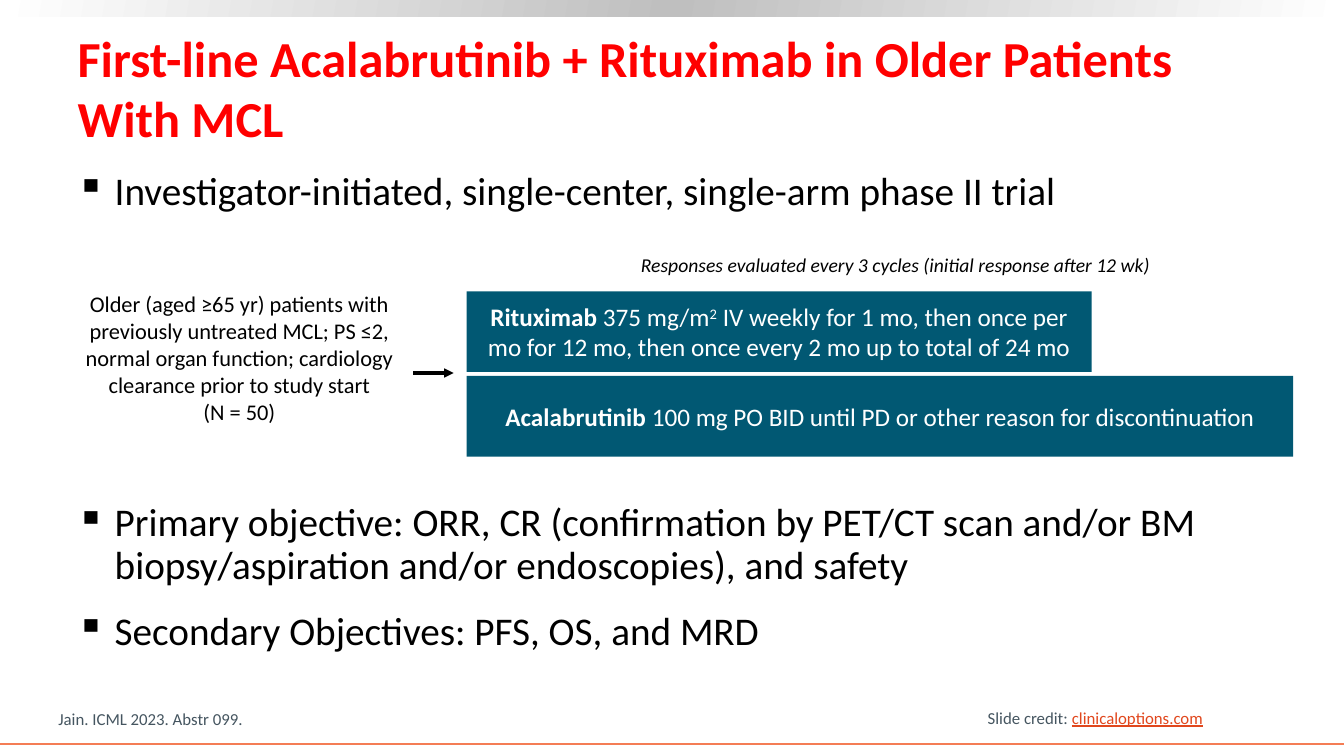
from copy import deepcopy
from dataclasses import dataclass

from lxml import etree
from pptx import Presentation
from pptx import util as u
from pptx.dml.color import RGBColor
from pptx.enum import shapes, text
from pptx.oxml import ns


@dataclass(frozen=True)
class Theme:
    """Colours, type sizes and font of the slide."""
    font: str = "Calibri"
    heading: str = "FF0000"
    ink: str = "000000"
    paper: str = "FFFFFF"
    silver: str = "BFBFBF"
    arm: str = "015873"
    muted: str = "455560"
    web: str = "E1471D"
    rule: str = "F47D55"
    title: int = 36
    body: int = 28
    label: int = 18
    patients: int = 16
    note: int = 14
    small: int = 12


def rgb(value):
    """Turn a hex string into a colour."""
    return RGBColor.from_string(value)


def add_bullet(para, color):
    """Give a paragraph a hanging square bullet."""
    properties = para._p.get_or_add_pPr()
    properties.set("marL", str(u.Inches(0.38)))
    properties.set("indent", str(-u.Inches(0.38)))
    bullet_color = etree.SubElement(properties, ns.qn("a:buClr"))
    etree.SubElement(bullet_color, ns.qn("a:srgbClr"), val=color)
    etree.SubElement(properties, ns.qn("a:buChar"), char="▪")


def write(frame, paragraphs, font, size, color, bold=False, italic=False,
          align="LEFT", anchor="TOP", wrap=True, bullets=False):
    """Fill a frame with paragraphs, each a list of (words, changes) spans."""
    frame.word_wrap = wrap
    frame.auto_size = text.MSO_AUTO_SIZE.NONE
    frame.vertical_anchor = getattr(text.MSO_ANCHOR, anchor)
    for index, spans in enumerate(paragraphs):
        para = frame.add_paragraph() if index else frame.paragraphs[0]
        para.alignment = getattr(text.PP_ALIGN, align)
        if bullets:
            add_bullet(para, color)
            para.line_spacing = 0.9
            para.space_before = u.Pt(10 if index else 0)
            para.space_after = u.Pt(7)
        for words, changes in spans:
            span = para.add_run()
            span.text = words
            span.font.name = font
            span.font.size = u.Pt(size)
            span.font.bold = changes.get("bold", bold)
            span.font.italic = italic
            span.font.underline = changes.get("underline")
            span.font.color.rgb = rgb(changes.get("color", color))
            if changes.get("raised"):
                span._r.get_or_add_rPr().set("baseline", "30000")


class TrialSlide:
    """Draws elements on a grid of 40 columns and 30 rows."""

    def __init__(self, deck, theme):
        """Add a title-only slide to the deck."""
        self.theme = theme
        self.column = deck.slide_width / 40
        self.row = deck.slide_height / 30
        self.slide = deck.slides.add_slide(deck.slide_layouts[5])

    def place(self, left, top, width, height):
        """Convert columns and rows to lengths."""
        return (round(left * self.column), round(top * self.row),
                round(width * self.column), round(height * self.row))

    def title(self, area, words):
        """Move and fill the title placeholder."""
        box = self.slide.shapes.title
        box.left, box.top, box.width, box.height = self.place(*area)
        write(box.text_frame, [[(words, {})]], self.theme.font, self.theme.title,
              self.theme.heading, bold=True, anchor="MIDDLE")

    def text(self, area, paragraphs, size, color, **style):
        """Add a text box."""
        box = self.slide.shapes.add_textbox(*self.place(*area))
        write(box.text_frame, paragraphs, self.theme.font, size, color, **style)

    def bullets(self, area, lines):
        """Add a bulleted list."""
        self.text(area, [[(line, {})] for line in lines],
                  self.theme.body, self.theme.ink, bullets=True)

    def rectangle(self, area):
        """Add a rectangle with neither line nor shadow."""
        box = self.slide.shapes.add_shape(shapes.MSO_SHAPE.RECTANGLE, *self.place(*area))
        box.shadow.inherit = False
        box.line.fill.background()
        return box

    def gradient_bar(self, area):
        """Add a bar that is darkest in its middle."""
        bar = self.rectangle(area)
        bar.fill.gradient()
        bar.fill.gradient_angle = 170
        stops = bar._element.spPr.find(".//" + ns.qn("a:gsLst"))
        stops.append(deepcopy(stops[0]))
        colors = (self.theme.paper, self.theme.silver, self.theme.paper)
        for index, (stop, color) in enumerate(zip(bar.fill.gradient_stops, colors)):
            stop.position = index / 2
            stop.color.rgb = rgb(color)

    def arm(self, area, spans):
        """Add a filled treatment box."""
        box = self.rectangle(area)
        box.fill.solid()
        box.fill.fore_color.rgb = rgb(self.theme.arm)
        write(box.text_frame, [spans], self.theme.font, self.theme.label,
              self.theme.paper, align="CENTER", anchor="MIDDLE")

    def line(self, start, end, row, color, weight, arrow=False):
        """Add a horizontal line, with an arrowhead if asked."""
        left, top, right, _ = self.place(start, row, end, 0)
        line = self.slide.shapes.add_connector(
            shapes.MSO_CONNECTOR.STRAIGHT, left, top, right, top)
        line.line.color.rgb = rgb(color)
        line.line.width = u.Pt(weight)
        if arrow:
            etree.SubElement(line.line._get_or_add_ln(), ns.qn("a:tailEnd"), type="triangle")
        etree.SubElement(line._element.spPr, ns.qn("a:effectLst"))


def main():
    """Build and save the slide."""
    deck = Presentation()
    deck.slide_width, deck.slide_height = u.Inches(13.33), u.Inches(7.5)
    theme = Theme()
    page = TrialSlide(deck, theme)

    page.gradient_bar((0, 0, 40, 0.64))
    page.line(0, 40, 29.52, theme.rule, 1.5)
    page.text((29.1, 27.88, 7.08, 1.2),
              [[("Slide credit: ", {}),
                ("clinicaloptions.com", {"color": theme.web, "underline": True})]],
              theme.small, theme.muted, wrap=False)
    page.title((2.01, 1.04, 35.67, 4.84),
               "First-line Acalabrutinib + Rituximab in Older Patients With MCL")
    page.bullets((1.98, 6.6, 35.7, 2),
                 ["Investigator-initiated, single-center, single-arm phase II trial"])
    page.bullets((1.98, 19.76, 35.7, 7.2),
                 ["Primary objective: ORR, CR (confirmation by PET/CT scan and/or BM "
                  "biopsy/aspiration and/or endoscopies), and safety",
                  "Secondary Objectives: PFS, OS, and MRD"])
    page.text((2.13, 11.32, 9.99, 5.8),
              [[("Older (aged ≥65 yr) patients with previously untreated MCL; PS ≤2, "
                 "normal organ function; cardiology clearance prior to study start", {})],
               [("(N = 50)", {})]],
              theme.patients, theme.ink, align="CENTER")

    bold = {"bold": True}
    arms = [
        (18.6, [("Rituximab ", bold), ("375 mg/m", {}), ("2", {"raised": True}),
                (" IV weekly for 1 mo, then once per mo for 12 mo, "
                 "then once every 2 mo up to total of 24 mo", {})]),
        (24.6, [("Acalabrutinib ", bold),
                ("100 mg PO BID until PD or other reason for discontinuation", {})]),
    ]
    for index, (width, spans) in enumerate(arms):
        page.arm((13.89, 11.56 + 3.36 * index, width, 3.2), spans)

    page.line(12.3, 13.5, 14.8, theme.ink, 2.25, arrow=True)
    page.text((17.73, 9.84, 17.85, 1.4),
              [[("Responses evaluated every 3 cycles (initial response after 12 wk)", {})]],
              theme.note, theme.ink, italic=True, align="CENTER")
    page.text((1.44, 27.92, 26.28, 1.2), [[("Jain. ICML 2023. Abstr 099.", {})]],
              theme.small, theme.muted, anchor="BOTTOM")
    deck.save("out.pptx")


if __name__ == "__main__":
    main()
